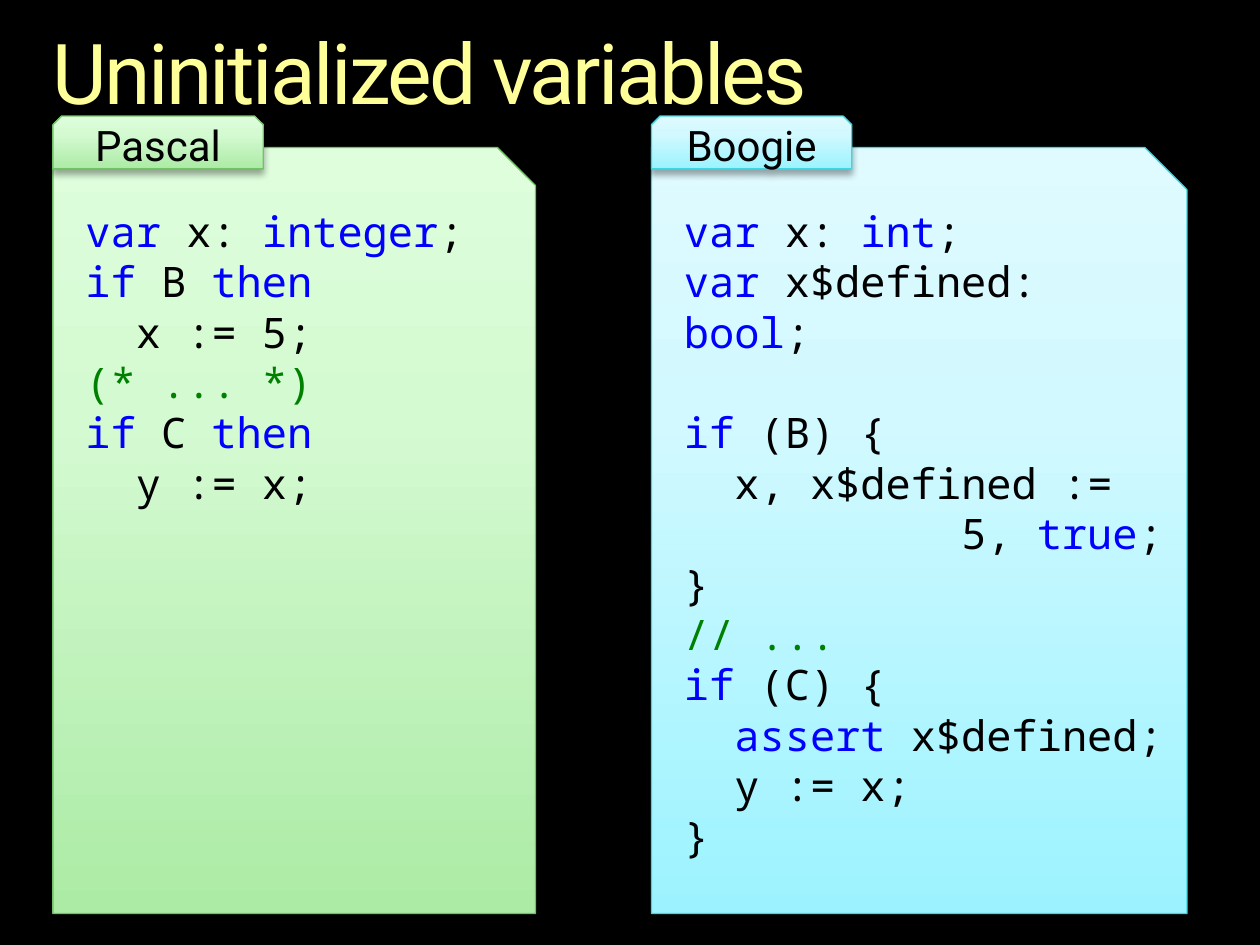
"""Build the slide comparing uninitialized variables in Pascal and Boogie."""
from copy import deepcopy

from lxml import etree
from pptx import Presentation
from pptx import util as u
from pptx.dml.color import RGBColor
from pptx.enum import shapes, text
from pptx.oxml.ns import qn

COLORS = {"background": "000000", "title": "FFFF99", "text": "000000",
          "keyword": "0000FF", "comment": "008000", "shadow": "000000"}
GREEN = {"line": "71C267", "stops": ("ACEBA6", "D4FAD1", "DEFEDC")}
BLUE = {"line": "3ED6E4", "stops": ("9CF3FF", "D1F9FF", "DFFBFF")}
STOP_POSITIONS = (0, 0.65, 1)

PASCAL = """`var` x: `integer`;
`if` B `then`
  x := 5;
(* ... *)
`if `C `then`
  y := x;"""

BOOGIE = """`var `x: `int`;
`var `x$defined: `bool`;

`if `(B) {
  x, x$defined :=
           5, `true`;
}
// ...
`if `(C) {
  `assert `x$defined;
  y := x;
}"""


def rgb(name):
    return RGBColor.from_string(COLORS.get(name, name))


class Deck:
    """Hold the style and the current slide."""

    body_font, code_font = "Roboto", "Noto Sans Mono"
    size, blank_line = u.Pt(24), u.Pt(28.8)

    def __init__(self):
        self.prs = Presentation()
        self.prs.slide_width, self.prs.slide_height = u.Inches(10), u.Inches(7.5)
        self.s = self.prs.slides.add_slide(self.prs.slide_layouts[5])
        fill = self.s.background.fill
        fill.solid()
        fill.fore_color.rgb = rgb("background")

    def title(self, words, *box):
        sp = self.s.shapes.title
        sp.left, sp.top, sp.width, sp.height = map(u.Inches, box)
        tf = sp.text_frame
        tf.margin_left = tf.margin_top = tf.margin_right = tf.margin_bottom = 0
        tf.vertical_anchor = text.MSO_ANCHOR.TOP
        tf.auto_size = text.MSO_AUTO_SIZE.NONE
        p = tf.paragraphs[0]
        p.alignment, p.line_spacing = text.PP_ALIGN.LEFT, 0.9
        r = p.add_run()
        r.text = words
        r.font.name, r.font.size = self.body_font, u.Pt(48)
        r.font.color.rgb = rgb("title")
        r.font._element.set("spc", "-150")

    def card(self, kind, theme, *box):
        sp = self.s.shapes.add_shape(kind, *map(u.Inches, box))
        sp.fill.gradient()
        sp.fill.gradient_angle = 90
        stops = sp._element.spPr.find(".//" + qn("a:gsLst"))
        stops.append(deepcopy(stops[-1]))
        for stop, position, color in zip(sp.fill.gradient_stops, STOP_POSITIONS, theme["stops"]):
            stop.position, stop.color.rgb = position, rgb(color)
        sp.line.color.rgb, sp.line.width = rgb(theme["line"]), u.Pt(0.75)
        self.shadow(sp)
        return sp

    def shadow(self, sp):
        sp.shadow.inherit = False
        effects = sp._element.spPr.find(qn("a:effectLst"))
        outer = etree.SubElement(effects, qn("a:outerShdw"), blurRad=str(u.Pt(4)),
                                 dist=str(u.Pt(3)), dir="5400000", rotWithShape="0")
        color = etree.SubElement(outer, qn("a:srgbClr"), val=COLORS["shadow"])
        etree.SubElement(color, qn("a:alpha"), val="35000")

    def panel(self, theme, *box):
        sp = self.card(shapes.MSO_SHAPE.SNIP_1_RECTANGLE, theme, *box)
        sp.adjustments[0] = 0.079

    def tab(self, words, theme, *box):
        sp = self.card(shapes.MSO_SHAPE.SNIP_2_SAME_RECTANGLE, theme, *box)
        tf = sp.text_frame
        tf.vertical_anchor = text.MSO_ANCHOR.MIDDLE
        p = tf.paragraphs[0]
        p.text, p.alignment = words, text.PP_ALIGN.CENTER
        p.font.name, p.font.size = self.body_font, self.size
        p.font.color.rgb = rgb("text")

    def code(self, source, *box):
        """Write code whose keywords stand between backticks."""
        tf = self.s.shapes.add_textbox(*map(u.Inches, box)).text_frame
        tf.word_wrap = True
        tf.auto_size = text.MSO_AUTO_SIZE.SHAPE_TO_FIT_TEXT
        p, gap = tf.paragraphs[0], False
        for i, line in enumerate(source.split("\n")):
            if not line:
                gap = True
                continue
            if i:
                p = tf.add_paragraph()
            if gap:
                p.space_before, gap = self.blank_line, False
            p.font.name, p.font.size = self.code_font, self.size
            plain = "comment" if line.startswith(("(*", "//")) else "text"
            for j, part in enumerate(line.split("`")):
                if part:
                    r = p.add_run()
                    r.text = part
                    r.font.name, r.font.size = self.code_font, self.size
                    r.font.color.rgb = rgb("keyword" if j % 2 else plain)


def main():
    deck = Deck()
    deck.title("Uninitialized variables", 0.42, 0.25, 9.17, 0.73)
    columns = (("Pascal", PASCAL, GREEN, 0.42, 3.83, 1.67, 0.58, 3.68, 2.93),
               ("Boogie", BOOGIE, BLUE, 5.17, 4.25, 1.59, 5.33, 4.08, 4.95))
    for name, source, theme, left, width, tab_width, code_left, code_width, code_height in columns:
        deck.panel(theme, left, 1.17, width, 6.08)
        deck.tab(name, theme, left, 0.92, tab_width, 0.42)
        deck.code(source, code_left, 1.58, code_width, code_height)
    deck.prs.save("out.pptx")


if __name__ == "__main__":
    main()
